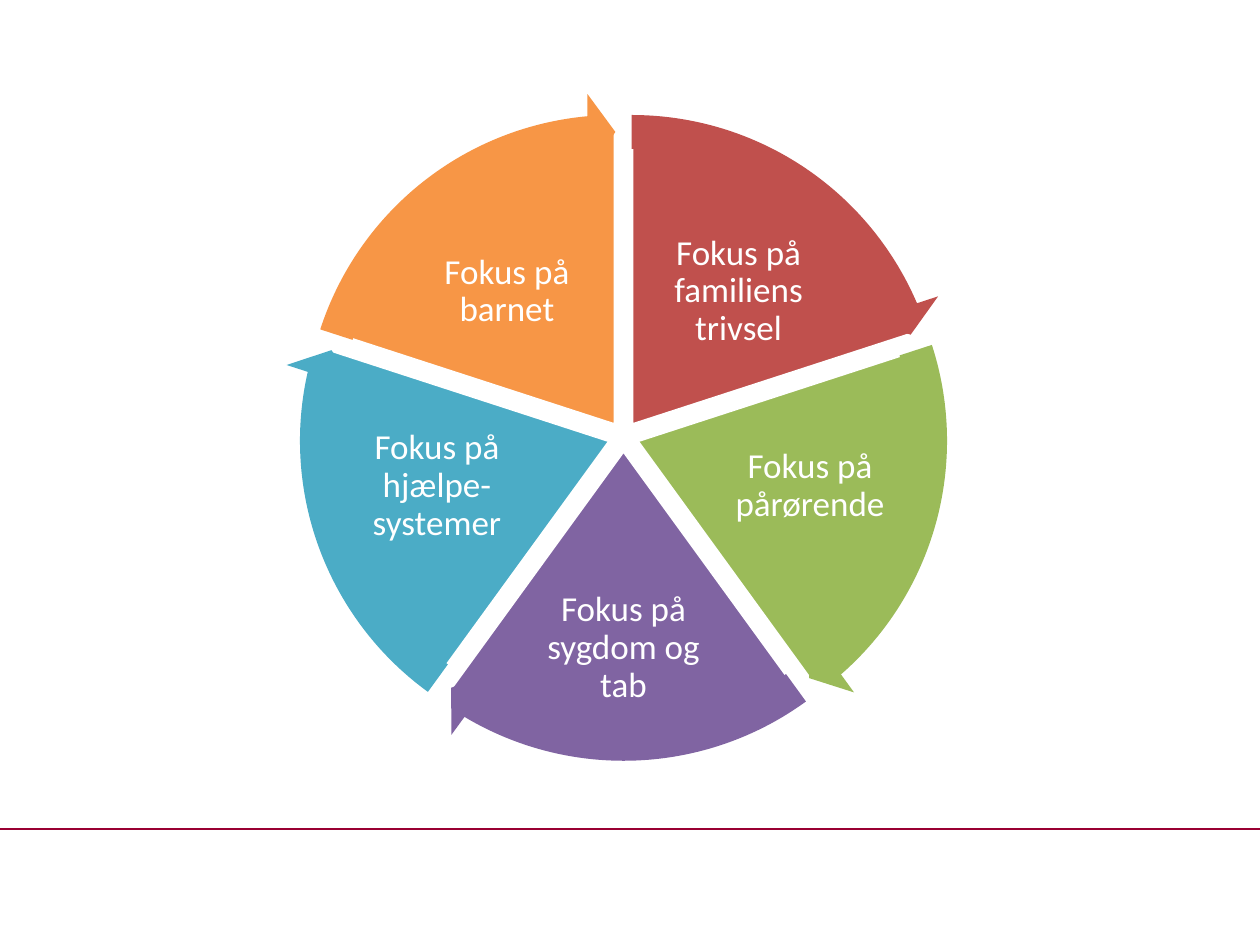
from math import cos, radians, sin

from lxml import etree
from pptx import Presentation
from pptx.dml.color import RGBColor
from pptx.enum.shapes import MSO_CONNECTOR, MSO_SHAPE
from pptx.enum.text import MSO_ANCHOR, PP_ALIGN
from pptx.oxml.ns import qn
from pptx.util import Cm, Pt

PIE = MSO_SHAPE.PIE
CIRCULAR_ARROW = MSO_SHAPE.CIRCULAR_ARROW
STRAIGHT = MSO_CONNECTOR.STRAIGHT
MIDDLE = MSO_ANCHOR.MIDDLE
CENTER = PP_ALIGN.CENTER

SLIDE_WIDTH, SLIDE_HEIGHT = 25.4, 19.05
WHEEL_BOX = (6.6, 2.83, 11.94)
ARROW_RATIO = 1.123
SLICE_SHIFT = 0.28
START_ANGLE = 270
ARROW_HEAD_ANGLE = 5.46
ANGLE_SCALE = 0.6

SLICES = [
    ("Fokus på familiens trivsel", "C0504D", (2.32, -2.92, 3.84, 2.57)),
    ("Fokus på pårørende", "9BBB59", (3.76, 1.0, 3.56, 2.84)),
    ("Fokus på sygdom og tab", "8064A2", (0, 4.27, 3.4, 3.12)),
    ("Fokus på hjælpe-systemer", "4BACC6", (-3.76, 1.0, 3.56, 2.84)),
    ("Fokus på barnet", "F79646", (-2.35, -2.92, 3.84, 2.57)),
]

FRAME_FORMAT = {
    "word_wrap": True,
    "vertical_anchor": MIDDLE,
    "margin_left": Cm(0.08),
    "margin_right": Cm(0.08),
    "margin_top": Cm(0.08),
    "margin_bottom": Cm(0.08),
}
PARAGRAPH_FORMAT = {"alignment": CENTER, "line_spacing": 0.9}
FONT_FORMAT = {"name": "Calibri", "size": Pt(20)}


def color(hex_text):
    """Return the colour for a hex string."""
    return RGBColor.from_string(hex_text)


def apply_format(target, values):
    """Set each attribute in values on the target."""
    for name, value in values.items():
        setattr(target, name, value)


def centered_box(x, y, width, height):
    """Return left, top, width and height of a box centred on a point."""
    return Cm(x - width / 2), Cm(y - height / 2), Cm(width), Cm(height)


def add_round_shape(slide, kind, center, size, fill, adjustments):
    """Add a square preset shape with a plain fill and no outline."""
    shape = slide.shapes.add_shape(kind, *centered_box(*center, size, size))
    for index, value in enumerate(adjustments):
        shape.adjustments[index] = value
    shape.shadow.inherit = False
    shape.fill.solid()
    shape.fill.fore_color.rgb = color(fill)
    shape.line.fill.background()
    return shape


def add_label(slide, text, x, y, width, height):
    """Add a centred white label around a point."""
    box = slide.shapes.add_textbox(*centered_box(x, y, width, height))
    frame = box.text_frame
    apply_format(frame, FRAME_FORMAT)
    paragraph = frame.paragraphs[0]
    apply_format(paragraph, PARAGRAPH_FORMAT)
    run = paragraph.add_run()
    run.text = text
    apply_format(run.font, FONT_FORMAT)
    run.font.color.rgb = color("FFFFFF")


def add_wheel(slide, left, top, size):
    """Add the slices with their labels, then the arrows along the rim."""
    center_x, center_y = left + size / 2, top + size / 2
    sweep = 360 / len(SLICES)
    arrows = []
    for index, (text, fill, (x, y, width, height)) in enumerate(SLICES):
        start = (START_ANGLE + index * sweep) % 360
        end = (start + sweep) % 360
        middle = radians(start + sweep / 2)
        center = (center_x + SLICE_SHIFT * cos(middle),
                  center_y + SLICE_SHIFT * sin(middle))
        pie = add_round_shape(slide, PIE, center, size, fill,
                              (start * ANGLE_SCALE, end * ANGLE_SCALE))
        pie.line.color.rgb = color("FFFFFF")
        pie.line.width = Pt(2)
        add_label(slide, text, center_x + x, center_y + y, width, height)
        tip = end - ARROW_HEAD_ANGLE
        arrows.append((center, fill, (0.051, ARROW_HEAD_ANGLE * ANGLE_SCALE,
                                      tip * ANGLE_SCALE, start * ANGLE_SCALE, 0.059)))
    for center, fill, adjustments in arrows:
        add_round_shape(slide, CIRCULAR_ARROW, center, size * ARROW_RATIO, fill, adjustments)


def add_footer_rule(slide, left, top, width):
    """Add the thin rule above the footer area."""
    rule = slide.shapes.add_connector(STRAIGHT, Cm(left), Cm(top), Cm(left + width), Cm(top))
    rule.line.color.rgb = color("990033")
    rule.line.width = Pt(0.75)
    etree.SubElement(rule._element.spPr, qn("a:effectLst"))


def main():
    """Build the slide and save it."""
    presentation = Presentation()
    presentation.slide_width = Cm(SLIDE_WIDTH)
    presentation.slide_height = Cm(SLIDE_HEIGHT)
    slide = presentation.slides.add_slide(presentation.slide_layouts[6])
    add_footer_rule(slide, 0, 16.71, SLIDE_WIDTH)
    add_wheel(slide, *WHEEL_BOX)
    presentation.save("out.pptx")


if __name__ == "__main__":
    main()
